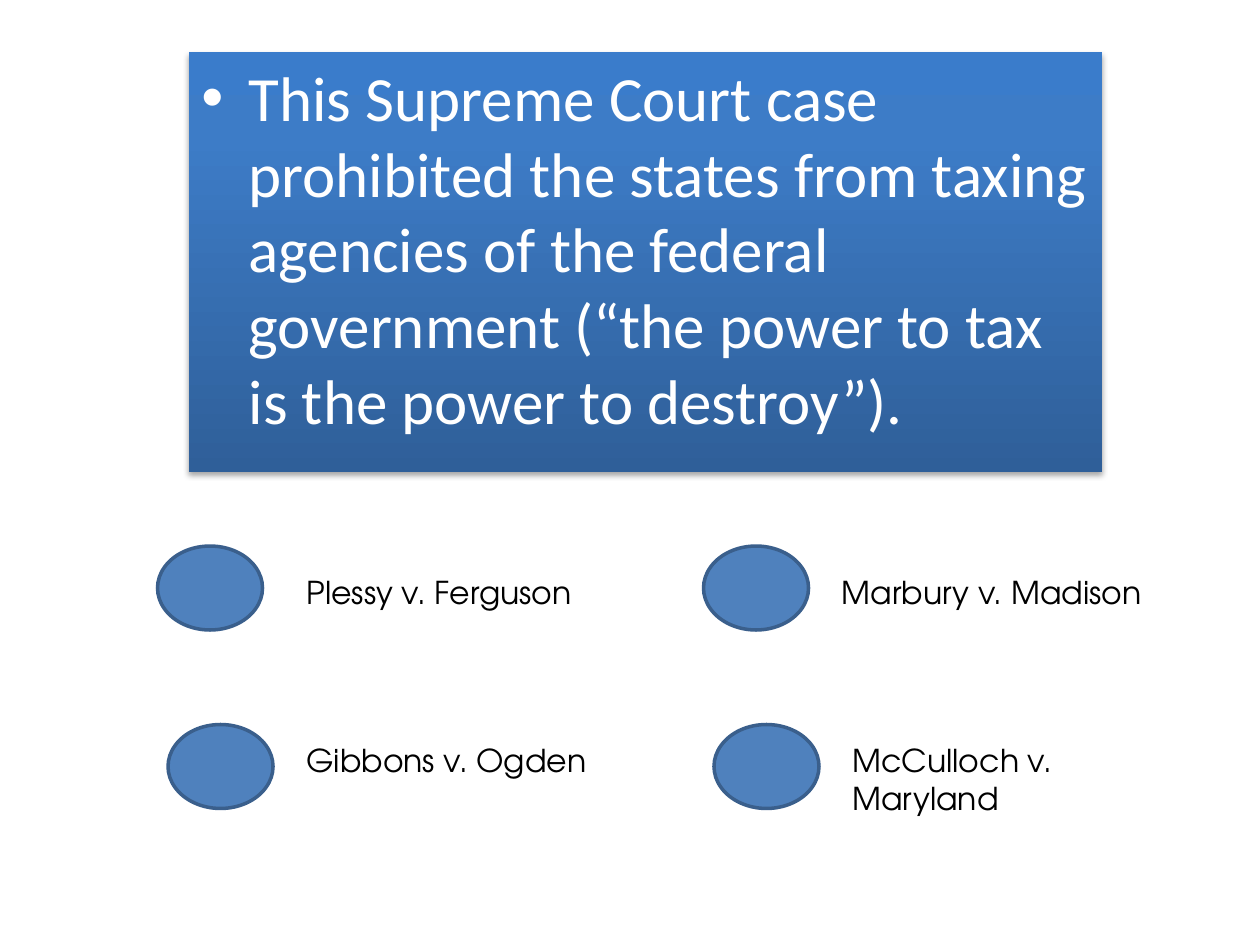
from lxml.etree import SubElement
from pptx import Presentation
from pptx.dml.color import RGBColor
from pptx.enum.shapes import MSO_SHAPE as Shape
from pptx.enum.text import MSO_ANCHOR as Anchor, PP_ALIGN as Align
from pptx.oxml.ns import qn
from pptx.util import Pt

PX = 9525  # 96 px to the inch
COLORS = {
    "white": "FFFFFF", "black": "000000", "oval": "4F81BD", "rim": "3A5F8C",
}
GRADIENT = [(0, "2F5F99"), (80, "3D7CC7"), (100, "3A7CCB")]

# Content
QUESTION = ("This Supreme Court case prohibited the states from taxing agencies "
            "of the federal government (“the power to tax is the power to destroy”).")
QUESTION_BOX = (144, 40, 696, 320)
OVAL_SIZE = (80, 64)
# answer, oval position, label box
ANSWERS = [
    ("Plessy v. Ferguson", (120, 416), (224, 432, 264, 38)),
    ("Marbury v. Madison", (536, 416), (632, 432, 264, 40)),
    ("Gibbons v. Ogden", (128, 552), (224, 560, 240, 38)),
    ("McCulloch v. Maryland", (544, 552), (640, 560, 283, 38)),
]
QUESTION_FONT = {"name": "Calibri", "size": Pt(36)}
ANSWER_FONT = {"name": "TeX Gyre Adventor", "size": Pt(18)}


def emu(*lengths):
    return [length * PX for length in lengths]


def rgb(name):
    return RGBColor.from_string(COLORS[name])


def add(parent, tag, **attributes):
    return SubElement(parent, qn(tag), {k: str(v) for k, v in attributes.items()})


def write(shape, text, font, color):
    frame = shape.text_frame
    frame.word_wrap = True
    frame.vertical_anchor = Anchor.TOP
    para = frame.paragraphs[0]
    para.alignment = Align.LEFT
    span = para.add_run()
    span.text = text
    for key, value in font.items():
        setattr(span.font, key, value)
    span.font.color.rgb = rgb(color)
    return para


def add_gradient(shape):
    shape.fill.gradient()
    fill = shape._element.spPr.find(qn("a:gradFill"))
    for child in list(fill):
        fill.remove(child)
    stops = add(fill, "a:gsLst")
    for position, color in GRADIENT:
        stop = add(stops, "a:gs", pos=position * 1000)
        add(stop, "a:srgbClr", val=color)
    add(fill, "a:lin", ang=270 * 60000, scaled=0)


def add_shadow(shape):
    shape.shadow.inherit = False
    effects = shape._element.spPr.find(qn("a:effectLst"))
    shadow = add(effects, "a:outerShdw", blurRad=Pt(3.1), dist=Pt(1.8),
                 dir=90 * 60000, rotWithShape=0)
    color = add(shadow, "a:srgbClr", val=COLORS["black"])
    add(color, "a:alpha", val=35000)


def add_bullet(para):
    props = para._p.get_or_add_pPr()
    props.set("marL", str(36 * PX))
    props.set("indent", str(-36 * PX))
    add(add(props, "a:spcBef"), "a:spcPct", val=20000)
    add(props, "a:buFont", typeface="Arial")
    add(props, "a:buChar", char="•")


deck = Presentation()
deck.slide_width, deck.slide_height = emu(960, 720)
page = deck.slides.add_slide(deck.slide_layouts[6])

# Question panel
panel = page.shapes.add_shape(Shape.RECTANGLE, *emu(*QUESTION_BOX))
add_gradient(panel)
panel.line.fill.background()
add_shadow(panel)
add_bullet(write(panel, QUESTION, QUESTION_FONT, "white"))

# Answer ovals and labels
for answer, corner, label_box in ANSWERS:
    oval = page.shapes.add_shape(Shape.OVAL, *emu(*corner, *OVAL_SIZE))
    oval.shadow.inherit = False
    oval.fill.solid()
    oval.fill.fore_color.rgb = rgb("oval")
    oval.line.color.rgb = rgb("rim")
    oval.line.width = Pt(2)
    label = page.shapes.add_textbox(*emu(*label_box))
    write(label, answer, ANSWER_FONT, "black")

deck.save("out.pptx")
